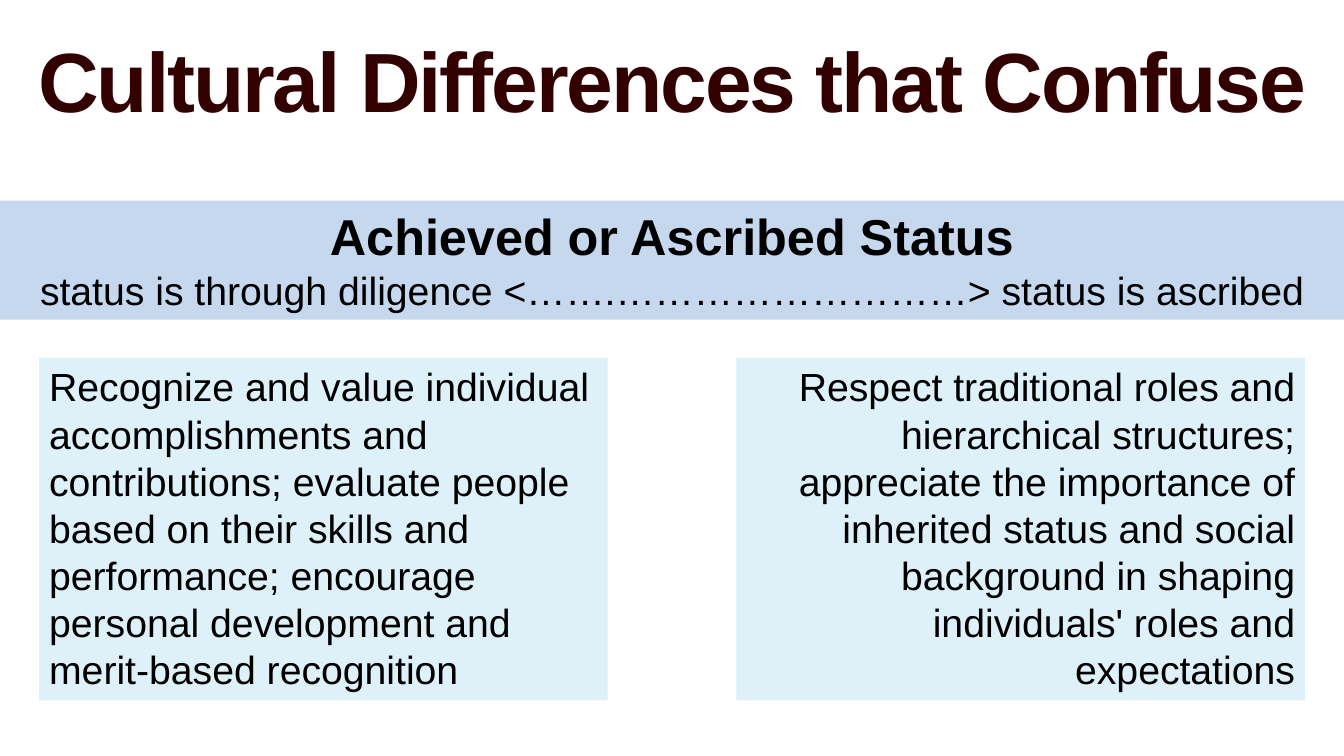
from pptx import Presentation
from pptx.dml.color import RGBColor
from pptx.enum.shapes import MSO_SHAPE as SHAPE
from pptx.enum.text import MSO_ANCHOR as ANCHOR, MSO_AUTO_SIZE as FIT, PP_ALIGN as ALIGN
from pptx.util import Pt

TITLE = "Cultural Differences that Confuse"
BAND = [
    ("Achieved or Ascribed Status", 36, True),
    ("status is through diligence <…….………………………> status is ascribed", 28, False),
]
ACHIEVED = (
    "Recognize and value individual accomplishments and contributions; "
    "evaluate people based on their skills and performance; "
    "encourage personal development and merit-based recognition"
)
ASCRIBED = (
    "Respect traditional roles and hierarchical structures; "
    "appreciate the importance of inherited status and social background "
    "in shaping individuals' roles and expectations"
)
COLORS = {"title": "330000", "text": "000000", "band": "C6D8ED", "panel": "DEF0F8"}
FONT = "Arial"

WIDTH, HEIGHT = 960, 540
MARGIN = 28
PANEL_WIDTH, PANEL_HEIGHT, PANEL_TOP = 406, 244.8, 255.6


def write(frame, lines, align, color):
    frame.word_wrap = True
    frame.auto_size = FIT.SHAPE_TO_FIT_TEXT
    frame.vertical_anchor = ANCHOR.TOP
    frame.text = "\n".join(text for text, size, bold in lines)
    for paragraph, (text, size, bold) in zip(frame.paragraphs, lines):
        paragraph.alignment = align
        font = paragraph.runs[0].font
        font.name = FONT
        font.size = Pt(size)
        font.bold = bold
        font.color.rgb = RGBColor.from_string(COLORS[color])


def add_block(slide, left, top, width, height, fill, lines, align):
    block = slide.shapes.add_shape(SHAPE.RECTANGLE, Pt(left), Pt(top), Pt(width), Pt(height))
    block.shadow.inherit = False
    block.fill.solid()
    block.fill.fore_color.rgb = RGBColor.from_string(COLORS[fill])
    block.line.fill.background()
    write(block.text_frame, lines, align, "text")


def main():
    deck = Presentation()
    deck.slide_width, deck.slide_height = Pt(WIDTH), Pt(HEIGHT)
    slide = deck.slides.add_slide(deck.slide_layouts[6])

    add_block(slide, 0, 143.3, WIDTH, 85, "band", BAND, ALIGN.CENTER)

    title = slide.shapes.add_textbox(Pt(0), Pt(16.5), Pt(WIDTH), Pt(80)).text_frame
    write(title, [(TITLE, 60, True)], ALIGN.CENTER, "title")
    title.paragraphs[0].runs[0]._r.get_or_add_rPr().set("spc", "-150")

    panels = [
        (WIDTH - MARGIN - PANEL_WIDTH, ASCRIBED, ALIGN.RIGHT),
        (MARGIN, ACHIEVED, ALIGN.LEFT),
    ]
    for left, text, align in panels:
        add_block(slide, left, PANEL_TOP, PANEL_WIDTH, PANEL_HEIGHT, "panel",
                  [(text, 28, False)], align)

    deck.save("out.pptx")


if __name__ == "__main__":
    main()
